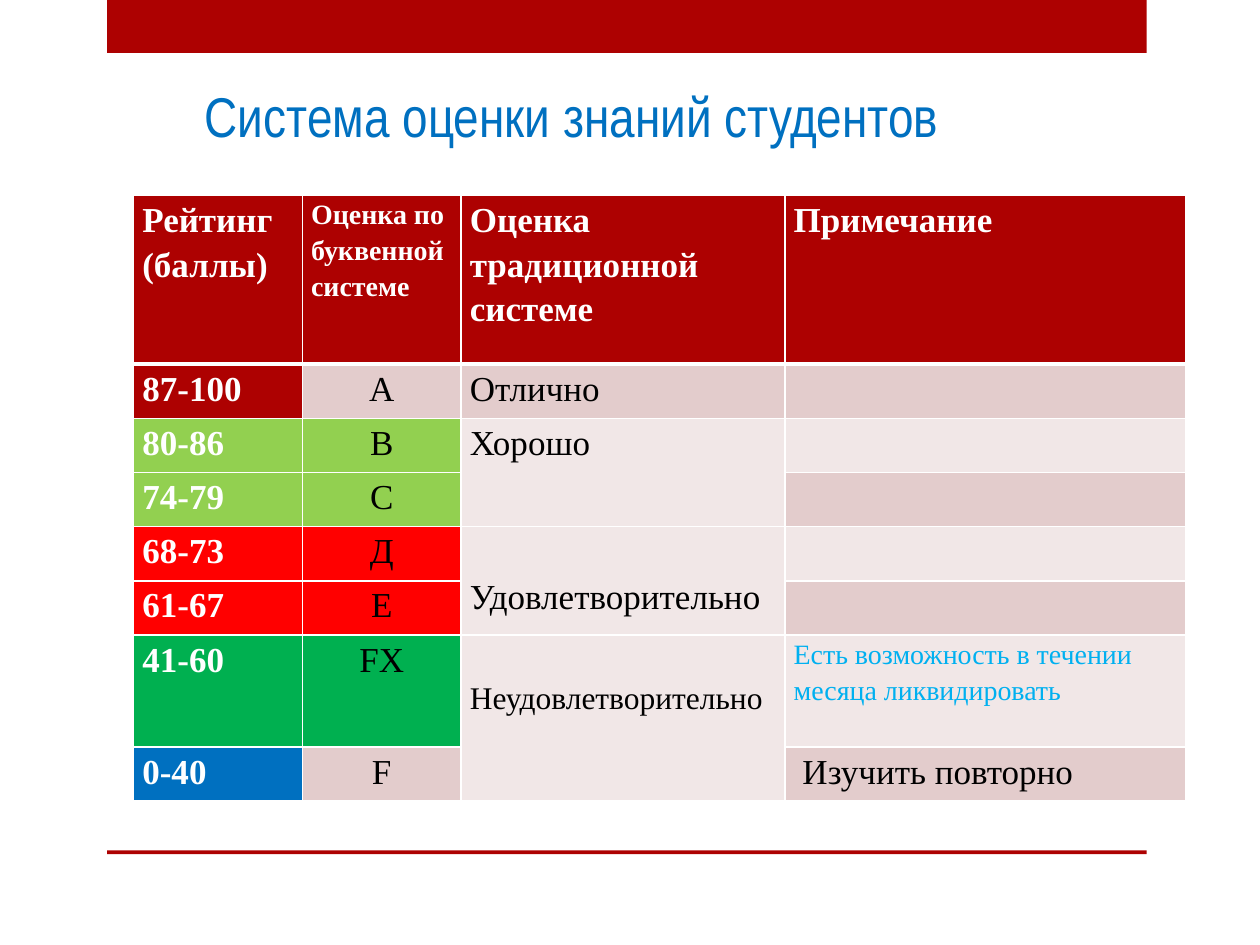
from dataclasses import dataclass

from lxml.etree import SubElement
from pptx import Presentation
from pptx.dml.color import RGBColor
from pptx.enum.shapes import MSO_SHAPE as Shape
from pptx.enum.text import MSO_ANCHOR as Anchor, PP_ALIGN as Align
from pptx.oxml.ns import qn
from pptx.util import Inches, Pt

DARK_RED = "AD0101"
BAND_DARK = "E3CCCC"
BAND_LIGHT = "F1E7E7"
LIME, RED, GREEN, BLUE = "92D050", "FF0000", "00B050", "0070C0"
SKY = "00B0F0"
WHITE, BLACK = "FFFFFF", "000000"

COLUMN_WIDTHS = [1.34, 1.26, 2.57, 3.18]
HEADER_HEIGHT, ROW_HEIGHT, TALL_ROW_HEIGHT = 1.34, 0.43, 0.89
GRADE_COLUMN = 2
SIDE_MARGIN = 0.07


@dataclass
class Entry:
    text: str
    fill: str
    size: int = 20
    color: str = BLACK
    bold: bool = False
    align: Align = Align.LEFT
    left: float = SIDE_MARGIN
    top: float = 0
    row_span: int = 1


@dataclass
class Rating:
    points: str
    points_fill: str
    letter: str
    letter_fill: str
    height: float = ROW_HEIGHT


HEADERS = [
    Entry("Рейтинг\n(баллы)", DARK_RED, 20, WHITE, True),
    Entry("Оценка по буквенной системе", DARK_RED, 16, WHITE, True),
    Entry("Оценка традиционной системе", DARK_RED, 20, WHITE, True),
    Entry("Примечание", DARK_RED, 20, WHITE, True),
]
RATINGS = [
    Rating("87-100", DARK_RED, "А", BAND_DARK),
    Rating("80-86", LIME, "В", LIME),
    Rating("74-79", LIME, "С", LIME),
    Rating("68-73", RED, "Д", RED),
    Rating("61-67", RED, "Е", RED),
    Rating("41-60", GREEN, "FX", GREEN, TALL_ROW_HEIGHT),
    Rating("0-40", BLUE, "F", BAND_DARK),
]
# Keyed by table row
GRADES = {
    1: Entry("Отлично", BAND_DARK),
    2: Entry("Хорошо", BAND_LIGHT, row_span=2),
    4: Entry("Удовлетворительно", BAND_LIGHT, top=0.36, row_span=2),
    6: Entry("Неудовлетворительно", BAND_LIGHT, 18, top=0.33, row_span=2),
}
NOTES = {
    6: Entry("Есть возможность в течении месяца ликвидировать", BAND_LIGHT, 16, SKY),
    7: Entry("Изучить повторно", BAND_DARK, left=0.14),
}


def rgb(color: str) -> RGBColor:
    return RGBColor.from_string(color)


def add_bar(slide, top: float, height: float) -> None:
    bar = slide.shapes.add_shape(
        Shape.RECTANGLE, Inches(0.85), Inches(top), Inches(8.25), Inches(height))
    bar.shadow.inherit = False
    bar.fill.solid()
    bar.fill.fore_color.rgb = rgb(DARK_RED)
    bar.line.fill.background()


def add_title(slide, text: str) -> None:
    title = slide.shapes.title
    title.left, title.top = Inches(0.83), Inches(0.52)
    title.width, title.height = Inches(7.42), Inches(0.71)
    title.text_frame.text = text
    title.text_frame.vertical_anchor = Anchor.BOTTOM
    paragraph = title.text_frame.paragraphs[0]
    paragraph.alignment = Align.CENTER
    font = paragraph.runs[0].font
    font.name, font.size, font.color.rgb = "Arial Narrow", Pt(32), rgb(BLUE)


def set_borders(cell, top: float, bottom: float) -> None:
    """Draw white borders; must run before the cell's fill is set."""
    properties = cell._tc.get_or_add_tcPr()
    for edge, width in {"lnL": 1, "lnR": 1, "lnT": top, "lnB": bottom}.items():
        line = SubElement(properties, qn(f"a:{edge}"), w=str(Pt(width)))
        fill = SubElement(line, qn("a:solidFill"))
        SubElement(fill, qn("a:srgbClr"), val=WHITE)


def fill_cell(table, row: int, column: int, entry: Entry) -> None:
    cell = table.cell(row, column)
    if entry.row_span > 1:
        cell.merge(table.cell(row + entry.row_span - 1, column))
    cell.margin_left, cell.margin_right = Inches(entry.left), Inches(SIDE_MARGIN)
    cell.margin_top, cell.margin_bottom = Inches(entry.top), 0
    cell.fill.solid()
    cell.fill.fore_color.rgb = rgb(entry.fill)
    cell.text_frame.text = entry.text
    for paragraph in cell.text_frame.paragraphs:
        paragraph.alignment = entry.align
        paragraph.line_spacing = 1.15
        font = paragraph.font
        for run in paragraph.runs:
            font = run.font
            font.name, font.size = "Times New Roman", Pt(entry.size)
            font.bold, font.color.rgb = entry.bold, rgb(entry.color)


def add_rating_table(slide) -> None:
    heights = [HEADER_HEIGHT] + [rating.height for rating in RATINGS]
    table = slide.shapes.add_table(
        len(heights), len(COLUMN_WIDTHS), Inches(1.06), Inches(1.55),
        Inches(sum(COLUMN_WIDTHS)), Inches(sum(heights))).table
    for column, width in zip(table.columns, COLUMN_WIDTHS):
        column.width = Inches(width)
    for index, height in enumerate(heights):
        table.rows[index].height = Inches(height)
        for cell in table.rows[index].cells:
            set_borders(cell, top=3 if index == 1 else 1, bottom=3 if index == 0 else 1)

    for column, header in enumerate(HEADERS):
        fill_cell(table, 0, column, header)
    for row, rating in enumerate(RATINGS, start=1):
        band = BAND_DARK if row % 2 else BAND_LIGHT
        points = Entry(rating.points, rating.points_fill, color=WHITE, bold=True)
        letter = Entry(rating.letter, rating.letter_fill, align=Align.CENTER)
        fill_cell(table, row, 0, points)
        fill_cell(table, row, 1, letter)
        fill_cell(table, row, 3, NOTES.get(row, Entry("", band)))
    for row, grade in GRADES.items():
        fill_cell(table, row, GRADE_COLUMN, grade)


def main() -> None:
    presentation = Presentation()
    presentation.slide_width, presentation.slide_height = Inches(10), Inches(7.5)
    slide = presentation.slides.add_slide(presentation.slide_layouts[5])
    add_bar(slide, 0, 0.42)
    add_bar(slide, 6.75, 0.03)
    add_title(slide, "Система оценки знаний студентов")
    add_rating_table(slide)
    presentation.save("out.pptx")


if __name__ == "__main__":
    main()
